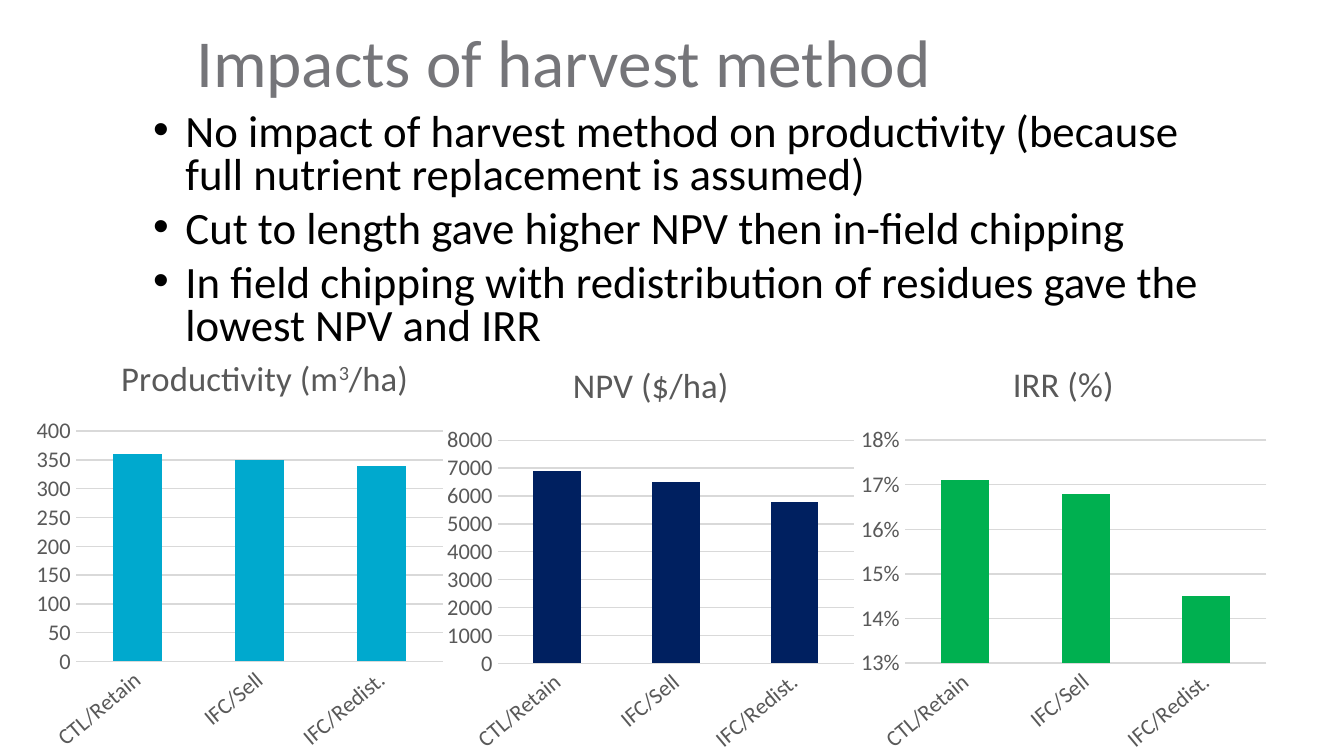
from lxml import etree
from pptx import Presentation
from pptx import util as u
from pptx.chart.data import CategoryChartData
from pptx.dml.color import RGBColor
from pptx.enum import chart as ch, text
from pptx.oxml import ns

PX = 4572
FONT = "Calibri"
COLORS = {"title": "757579", "body": "000000", "label": "595959", "grid": "D9D9D9",
          "productivity": "00A9CE", "npv": "002060", "irr": "00B050"}
BULLETS = [
    "No impact of harvest method on productivity (because full nutrient replacement is assumed)",
    "Cut to length gave higher NPV then in-field chipping",
    "In field chipping with redistribution of residues gave the lowest NPV and IRR",
]
METHODS = ["CTL/Retain", "IFC/Sell", "IFC/Redist."]
CHARTS = [
    dict(box=(42, 500, 630, 630), title=["Productivity (m", "3", "/ha)"], color="productivity",
         values=[360, 350, 340], axis=(0, 400, 50), fmt="General",
         title_at=(132, 22), plot=(71, 142, 546, 343)),
    dict(box=(654, 504, 630, 630), title=["NPV ($/ha)"], color="npv",
         values=[6900, 6500, 5800], axis=(0, 8000, 1000), fmt="General",
         title_at=(189, 23), plot=(87, 151, 530, 332)),
    dict(box=(1268, 502, 630, 630), title=["IRR (%)"], color="irr",
         values=[0.171, 0.168, 0.145], axis=(0.13, 0.18, 0.01), fmt="0%",
         title_at=(230, 24), plot=(79, 153, 538, 332)),
]


def emu(box):
    return [v * PX for v in box]


def style(font, size, color):
    font.name = FONT
    font.size = u.Pt(size)
    font.bold = False
    font.color.rgb = RGBColor.from_string(COLORS[color])


def add_text_frame(s, box):
    tf = s.shapes.add_textbox(*emu(box)).text_frame
    tf.word_wrap = True
    tf.vertical_anchor = text.MSO_ANCHOR.TOP
    tf.margin_left = tf.margin_top = tf.margin_right = tf.margin_bottom = 0
    return tf


def add_title(s, box):
    r = add_text_frame(s, box).paragraphs[0].add_run()
    r.text = "Impacts of harvest method"
    style(r.font, 36, "title")


def add_bullets(s, box):
    tf = add_text_frame(s, box)
    for i, line in enumerate(BULLETS):
        p = tf.add_paragraph() if i else tf.paragraphs[0]
        pPr = p._p.get_or_add_pPr()
        pPr.set("marL", str(48 * PX))
        pPr.set("indent", str(-48 * PX))
        etree.SubElement(pPr, ns.qn("a:buFont")).set("typeface", "Arial")
        etree.SubElement(pPr, ns.qn("a:buChar")).set("char", "•")
        p.line_spacing = 0.8
        if i:
            p.space_before = u.Pt(6)
        r = p.add_run()
        r.text = line
        style(r.font, 24, "body")


def set_layout(parent, index, box, size, inner=False):
    for old in parent.findall(ns.qn("c:layout")):
        parent.remove(old)
    layout = etree.Element(ns.qn("c:layout"))
    manual = etree.SubElement(layout, ns.qn("c:manualLayout"))
    settings = [("layoutTarget", "inner")] if inner else []
    settings += [("xMode", "edge"), ("yMode", "edge")]
    settings += [(k, f"{v / d:.3f}") for k, v, d in zip("xywh", box, size * 2)]
    for key, value in settings:
        etree.SubElement(manual, ns.qn(f"c:{key}")).set("val", value)
    parent.insert(index, layout)


def style_axis(axis):
    axis.major_tick_mark = axis.minor_tick_mark = ch.XL_TICK_MARK.NONE
    axis.format.line.fill.background()
    style(axis.tick_labels.font, 12, "label")


def add_column_chart(s, box, title, color, values, axis, fmt, title_at, plot):
    data = CategoryChartData(number_format=fmt)
    data.categories = METHODS
    data.add_series("Series 1", values)
    chart = s.shapes.add_chart(ch.XL_CHART_TYPE.COLUMN_CLUSTERED, *emu(box), data).chart
    style(chart.font, 10, "body")
    chart.has_legend = False

    chart.has_title = True
    p = chart.chart_title.text_frame.paragraphs[0]
    for i, part in enumerate(title):
        r = p.add_run()
        r.text = part
        style(r.font, 18.6, "label")
        if i == 1:
            r._r.get_or_add_rPr().set("baseline", "30000")
    chart.chart_title.include_in_layout = False
    size = box[2:]
    set_layout(chart.chart_title._element, 1, title_at, size)
    set_layout(chart._chartSpace.chart.plotArea, 0, plot, size, inner=True)

    cat, val = chart.category_axis, chart.value_axis
    style_axis(cat)
    style_axis(val)
    cat._element.txPr.bodyPr.set("rot", "-2400000")
    val.minimum_scale, val.maximum_scale, val.major_unit = axis
    val.tick_labels.number_format = fmt
    val.tick_labels.number_format_is_linked = False
    grid = val.major_gridlines.format.line
    grid.width = u.Pt(0.75)
    grid.color.rgb = RGBColor.from_string(COLORS["grid"])

    bars = chart.plots[0]
    bars.gap_width = 150
    bars.vary_by_categories = False
    fill = bars.series[0].format.fill
    fill.solid()
    fill.fore_color.rgb = RGBColor.from_string(COLORS[color])


def main():
    prs = Presentation()
    prs.slide_width, prs.slide_height = emu((2000, 1125))
    s = prs.slides.add_slide(prs.slide_layouts[6])
    add_title(s, (292, 30, 1544, 174))
    add_bullets(s, (228, 168, 1588, 390))
    for settings in CHARTS:
        add_column_chart(s, **settings)
    prs.save("out.pptx")


if __name__ == "__main__":
    main()
